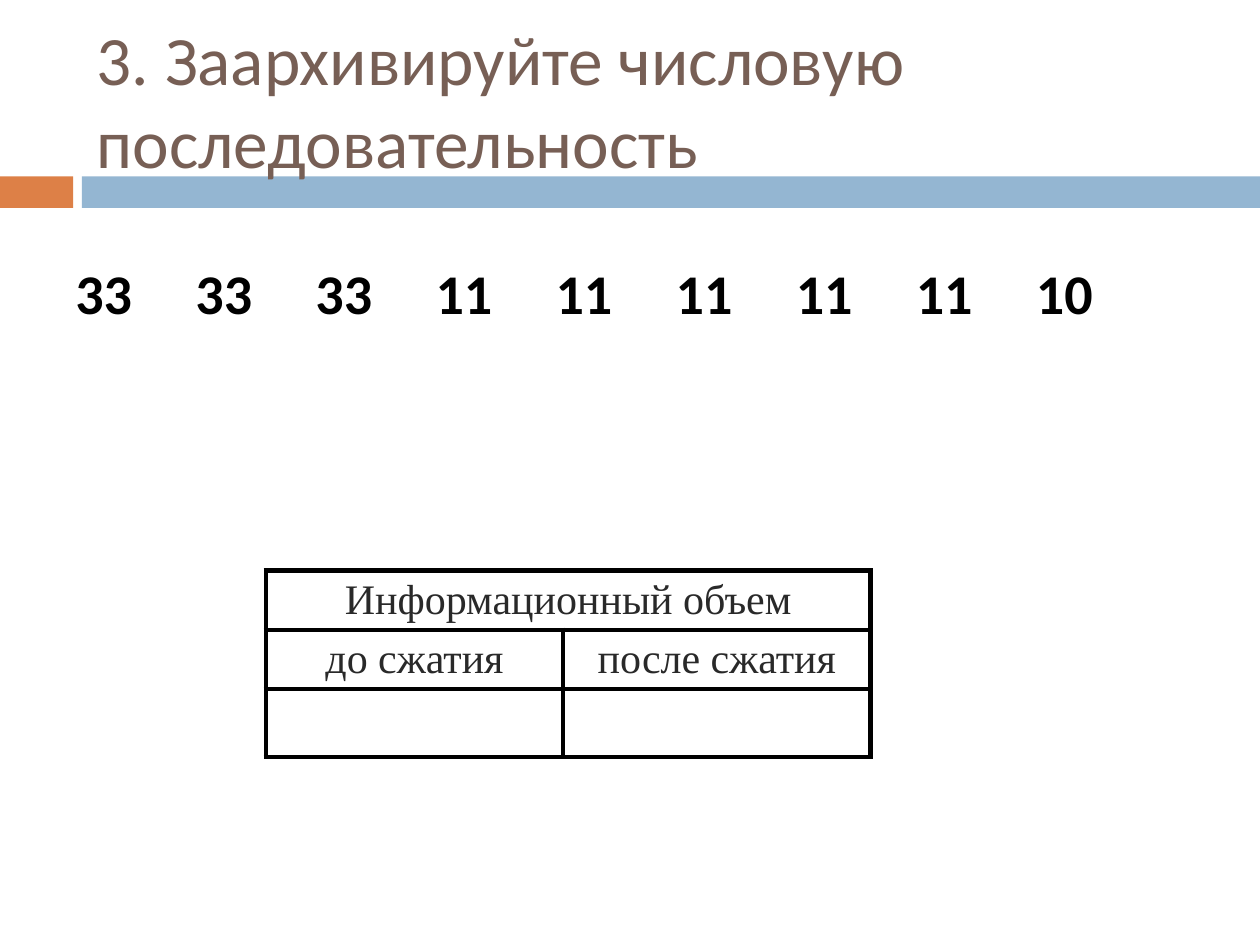
from dataclasses import dataclass

from lxml import etree
from pptx import Presentation
from pptx import util as u
from pptx.dml.color import RGBColor
from pptx.enum import shapes, text
from pptx.oxml import ns

WIDTH, HEIGHT = u.Inches(10), u.Inches(7.5)
ORANGE = RGBColor(0xDD, 0x80, 0x47)
BLUE = RGBColor(0x94, 0xB6, 0xD2)
BROWN = RGBColor(0x77, 0x5F, 0x55)
BLACK = RGBColor(0, 0, 0)
CHARCOAL = RGBColor(0x29, 0x29, 0x29)
NUMBERS = (33, 33, 33, 11, 11, 11, 11, 11, 10)
NUMBER_STEP = u.Inches(0.953)


@dataclass(frozen=True)
class Area:
    """Rectangle given in inches."""

    left: float
    top: float
    width: float
    height: float

    def box(self) -> tuple:
        """Return the rectangle as lengths."""
        return tuple(map(u.Inches, (self.left, self.top, self.width, self.height)))


@dataclass(frozen=True)
class Style:
    """Look of a run of text."""

    font: str
    size: float
    color: RGBColor
    bold: bool = False


TITLE = Style("Calibri", 39.6, BROWN)
SEQUENCE = Style("Calibri", 32, BLACK, True)
CELL = Style("Times New Roman", 24, CHARCOAL)
BARS = ((Area(0, 1.4, 0.58, 0.25), ORANGE), (Area(0.65, 1.4, 9.35, 0.25), BLUE))


def write(frame, content: str, style: Style):
    """Fill a text frame and return its first paragraph."""
    frame.text = content
    paragraph = frame.paragraphs[0]
    for run in paragraph.runs:
        run.font.name = style.font
        run.font.size = u.Pt(style.size)
        run.font.color.rgb = style.color
        run.font.bold = style.bold
    return paragraph


def add_bar(slide, area: Area, color: RGBColor) -> None:
    """Draw a plain coloured bar."""
    shape = slide.shapes.add_shape(shapes.MSO_SHAPE.RECTANGLE, *area.box())
    shape.shadow.inherit = False
    shape.fill.solid()
    shape.fill.fore_color.rgb = color
    shape.line.fill.background()


def add_text(slide, area: Area, content: str, style: Style, anchor):
    """Add a wrapping text box and return its paragraph."""
    frame = slide.shapes.add_textbox(*area.box()).text_frame
    frame.word_wrap = True
    frame.auto_size = text.MSO_AUTO_SIZE.NONE
    frame.vertical_anchor = anchor
    return write(frame, content, style)


def set_tabs(paragraph, step: int, count: int) -> None:
    """Place equally spaced tab stops."""
    properties = paragraph._p.get_or_add_pPr()
    stops = etree.SubElement(properties, ns.qn("a:tabLst"))
    for index in range(1, count + 1):
        etree.SubElement(stops, ns.qn("a:tab"), pos=str(step * index), algn="l")


def set_borders(cell, color: RGBColor, width: float) -> None:
    """Outline a cell on all sides and leave it unfilled."""
    properties = cell._tc.get_or_add_tcPr()
    for side in ("a:lnL", "a:lnR", "a:lnT", "a:lnB"):
        line = etree.SubElement(properties, ns.qn(side), w=str(u.Pt(width)))
        fill = etree.SubElement(line, ns.qn("a:solidFill"))
        etree.SubElement(fill, ns.qn("a:srgbClr"), val=str(color))
    cell.fill.background()


def add_volume_table(slide) -> None:
    """Add the table of volumes before and after compression."""
    columns, rows = (2.36, 2.44), (0.47, 0.47, 0.54)
    area = Area(2.11, 4.53, sum(columns), sum(rows))
    table = slide.shapes.add_table(len(rows), len(columns), *area.box()).table
    table.first_row = table.horz_banding = False
    for column, width in zip(table.columns, columns):
        column.width = u.Inches(width)
    for row, height in zip(table.rows, rows):
        row.height = u.Inches(height)
    for cell in table.iter_cells():
        cell.margin_top = cell.margin_bottom = u.Inches(0.04)
        cell.vertical_anchor = text.MSO_ANCHOR.MIDDLE
        set_borders(cell, BLACK, 3)
    table.cell(0, 0).merge(table.cell(0, 1))
    labels = {(0, 0): "Информационный объем", (1, 0): "до сжатия", (1, 1): "после сжатия"}
    for position, label in labels.items():
        paragraph = write(table.cell(*position).text_frame, label, CELL)
        paragraph.alignment = text.PP_ALIGN.CENTER


def main() -> None:
    """Build and save the slide."""
    presentation = Presentation()
    presentation.slide_width, presentation.slide_height = WIDTH, HEIGHT
    slide = presentation.slides.add_slide(presentation.slide_layouts[6])
    for area, color in BARS:
        add_bar(slide, area, color)
    add_text(slide, Area(0.67, 0.25, 8.92, 1.08),
             "3. Заархивируйте числовую последовательность", TITLE, text.MSO_ANCHOR.MIDDLE)
    sequence = add_text(slide, Area(0.5, 2, 9, 1.75),
                        "\t".join(map(str, NUMBERS)), SEQUENCE, text.MSO_ANCHOR.TOP)
    sequence.space_before = u.Pt(7)
    set_tabs(sequence, NUMBER_STEP, len(NUMBERS) - 1)
    add_volume_table(slide)
    presentation.save("out.pptx")


if __name__ == "__main__":
    main()
